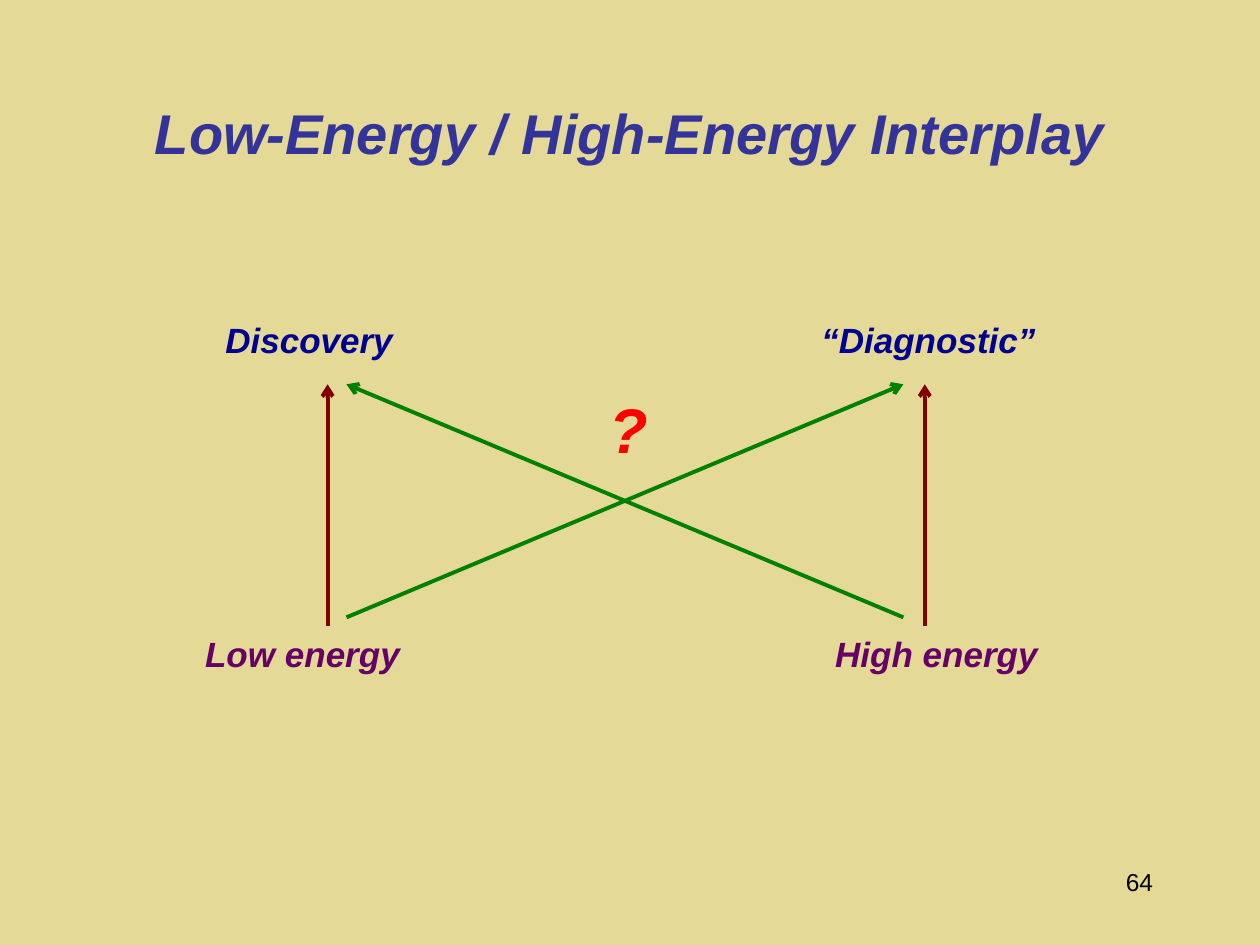
from dataclasses import dataclass

from lxml import etree
from pptx import Presentation
from pptx import util as u
from pptx.dml.color import RGBColor
from pptx.enum import shapes, text
from pptx.oxml.ns import qn

WIDTH, HEIGHT = u.Inches(10), u.Inches(7.5)
FONT = "Arial"
COLORS = {
    "background": "E4D997",
    "title": "333399",
    "goal": "000090",
    "energy": "660066",
    "question": "FF0000",
    "direct": "800000",
    "cross": "008000",
    "number": "000000",
}

# Shares of the slide, in percent of its width (x) or height (y)
GOAL_TOP, ENERGY_TOP, LABEL_HEIGHT = 33.07, 66.27, 5.87
ARROW_TIP, CROSS_START = 40.67, 65.33
DIRECT_LEFT, DIRECT_RIGHT = 26, 73.4
CROSS_LEFT, CROSS_RIGHT = 27.5, 71.7


@dataclass(frozen=True)
class Label:
    words: str
    left: float
    top: float
    width: float
    height: float
    color: str
    size: int = 20
    emphasis: bool = True
    align: text.PP_ALIGN = text.PP_ALIGN.LEFT
    anchor: text.MSO_ANCHOR = text.MSO_ANCHOR.TOP


@dataclass(frozen=True)
class Arrow:
    start_x: float
    start_y: float
    end_x: float
    color: str


LABELS = [
    Label("64", 71.7, 91.07, 20.8, 6.67, "number", 14, False, text.PP_ALIGN.RIGHT),
    Label("Low-Energy / High-Energy Interplay", 7.5, 8.93, 85, 10, "title", 32,
          align=text.PP_ALIGN.CENTER, anchor=text.MSO_ANCHOR.MIDDLE),
    Label("Discovery", 16.9, GOAL_TOP, 17.6, LABEL_HEIGHT, "goal"),
    Label("“Diagnostic”", 64.2, GOAL_TOP, 21.2, LABEL_HEIGHT, "goal"),
    Label("Low energy", 15.3, ENERGY_TOP, 17.6, LABEL_HEIGHT, "energy"),
    Label("High energy", 65.3, ENERGY_TOP, 20.1, LABEL_HEIGHT, "energy"),
    Label("?", 47.4, ARROW_TIP, 9.1, 9.47, "question", 36),
]
ARROWS = [
    Arrow(CROSS_LEFT, CROSS_START, CROSS_RIGHT, "cross"),
    Arrow(CROSS_RIGHT, CROSS_START, CROSS_LEFT, "cross"),
    Arrow(DIRECT_LEFT, ENERGY_TOP, DIRECT_LEFT, "direct"),
    Arrow(DIRECT_RIGHT, ENERGY_TOP, DIRECT_RIGHT, "direct"),
]


def across(percent: float) -> int:
    return round(WIDTH * percent / 100)


def down(percent: float) -> int:
    return round(HEIGHT * percent / 100)


def rgb(name: str) -> RGBColor:
    return RGBColor.from_string(COLORS[name])


def add_label(slide, label: Label) -> None:
    shape = slide.shapes.add_textbox(across(label.left), down(label.top),
                                     across(label.width), down(label.height))
    frame = shape.text_frame
    frame.word_wrap = True
    frame.vertical_anchor = label.anchor
    paragraph = frame.paragraphs[0]
    paragraph.alignment = label.align
    run = paragraph.add_run()
    run.text = label.words
    run.font.name = FONT
    run.font.size = u.Pt(label.size)
    run.font.bold = run.font.italic = label.emphasis
    run.font.color.rgb = rgb(label.color)


def add_arrow(slide, arrow: Arrow) -> None:
    connector = slide.shapes.add_connector(
        shapes.MSO_CONNECTOR.STRAIGHT,
        across(arrow.start_x), down(arrow.start_y),
        across(arrow.end_x), down(ARROW_TIP))
    connector.line.color.rgb = rgb(arrow.color)
    connector.line.width = u.Pt(2.25)
    properties = connector._element.spPr
    etree.SubElement(properties.find(qn("a:ln")), qn("a:tailEnd"), type="arrow")
    etree.SubElement(properties, qn("a:effectLst"))


def main() -> None:
    presentation = Presentation()
    presentation.slide_width, presentation.slide_height = WIDTH, HEIGHT
    slide = presentation.slides.add_slide(presentation.slide_layouts[6])
    slide.background.fill.solid()
    slide.background.fill.fore_color.rgb = rgb("background")
    for arrow in ARROWS:
        add_arrow(slide, arrow)
    for label in LABELS:
        add_label(slide, label)
    presentation.save("out.pptx")


if __name__ == "__main__":
    main()
